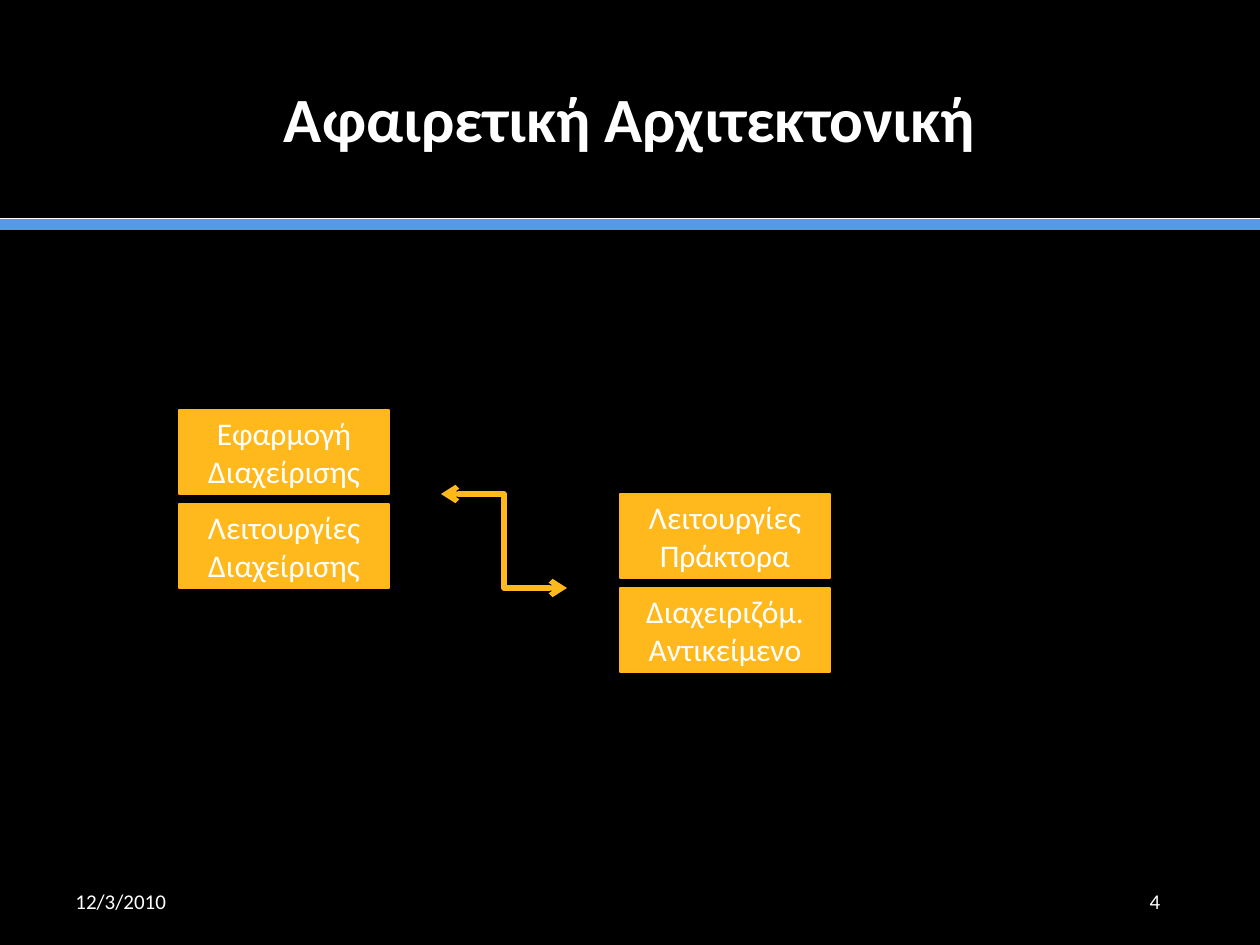
from dataclasses import dataclass

from lxml.etree import SubElement
from pptx import Presentation
from pptx.dml.color import RGBColor as Rgb
from pptx.enum.shapes import MSO_CONNECTOR as Link, MSO_SHAPE as Preset
from pptx.enum.text import MSO_ANCHOR as Anchor, PP_ALIGN as Align
from pptx.oxml.ns import qn
from pptx.util import Pt

EMU_PER_PX = 914400 / 126


@dataclass(frozen=True)
class Theme:
    font: str = "Calibri"
    background: Rgb = Rgb(0, 0, 0)
    text: Rgb = Rgb(255, 255, 255)
    band: Rgb = Rgb.from_string("5799E8")
    accent: Rgb = Rgb.from_string("FFB91D")
    outline: Rgb = Rgb.from_string("FFB717")
    title_size: int = 36
    box_size: int = 18
    footer_size: int = 12


THEME = Theme()
BOX_WIDTH, BOX_HEIGHT, BOX_STEP = 210, 84, 94
STACKS = [
    (179, 410, ["Εφαρμογή Διαχείρισης", "Λειτουργίες Διαχείρισης"]),
    (620, 494, ["Λειτουργίες Πράκτορα", "Διαχειριζόμ. Αντικείμενο"]),
]


def px(*lengths):
    return [round(length * EMU_PER_PX) for length in lengths]


def write_text(holder, text, size, bold=False, align=Align.CENTER):
    frame = holder.text_frame
    frame.word_wrap = True
    frame.vertical_anchor = Anchor.MIDDLE
    paragraph = frame.paragraphs[0]
    paragraph.alignment = align
    run = paragraph.add_run()
    run.text = text
    run.font.name = THEME.font
    run.font.size = Pt(size)
    run.font.bold = bold
    run.font.color.rgb = THEME.text


def add_label(slide, bounds, text, size, **text_format):
    label = slide.shapes.add_textbox(*px(*bounds))
    write_text(label, text, size, **text_format)


def add_box(slide, left, top, text):
    box = slide.shapes.add_shape(
        Preset.RECTANGLE, *px(left, top, BOX_WIDTH, BOX_HEIGHT))
    box.shadow.inherit = False
    box.fill.solid()
    box.fill.fore_color.rgb = THEME.accent
    box.line.color.rgb = THEME.outline
    box.line.width = Pt(1.5)
    write_text(box, text, THEME.box_size)


def add_line(slide, ends, color, width, kind=Link.STRAIGHT, arrows=()):
    line = slide.shapes.add_connector(kind, *px(*ends))
    line.line.color.rgb = color
    line.line.width = Pt(width)
    properties = line.line._get_or_add_ln()
    for end in arrows:
        SubElement(properties, qn(f"a:{end}"), type="arrow")
    SubElement(line._element.spPr, qn("a:effectLst"))


def main():
    deck = Presentation()
    deck.slide_width, deck.slide_height = px(1260, 945)
    slide = deck.slides.add_slide(deck.slide_layouts[6])
    slide.background.fill.solid()
    slide.background.fill.fore_color.rgb = THEME.background

    add_line(slide, (0, 224, 1260, 224), THEME.band, 7)
    add_line(slide, (0, 218, 1260, 218), THEME.text, 0.5)
    add_label(slide, (63, 38, 1134, 158), "Αφαιρετική Αρχιτεκτονική",
              THEME.title_size, bold=True)
    add_label(slide, (63, 876, 294, 50), "12/3/2010",
              THEME.footer_size, align=Align.LEFT)
    add_label(slide, (1113, 876, 84, 50), "4", THEME.footer_size)

    for left, top, names in STACKS:
        for row, name in enumerate(names):
            add_box(slide, left, top + row * BOX_STEP, name)
    add_line(slide, (441, 494, 567, 588), THEME.accent, 3,
             kind=Link.ELBOW, arrows=("headEnd", "tailEnd"))
    deck.save("out.pptx")


if __name__ == "__main__":
    main()
